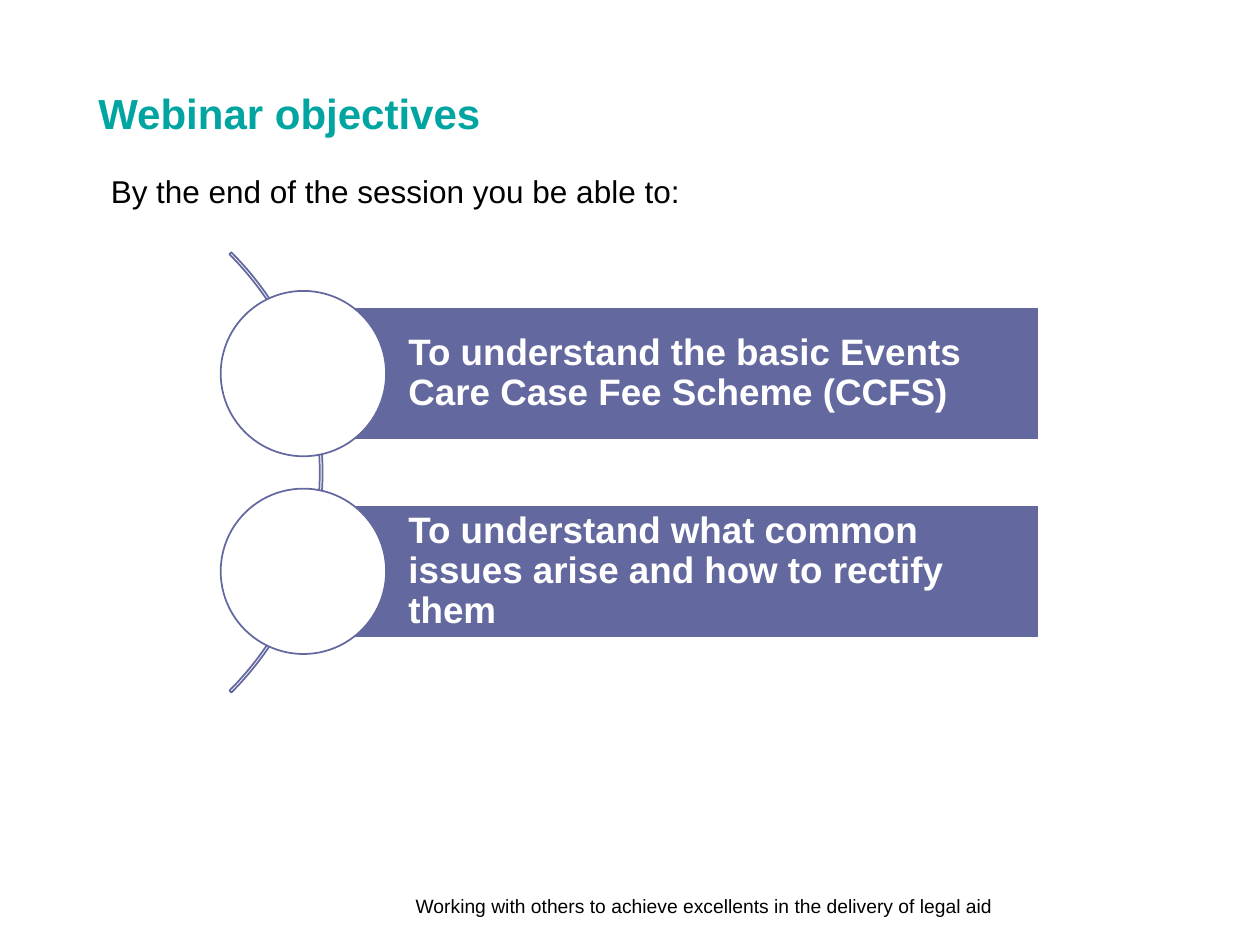
from pptx import Presentation
from pptx.dml.color import RGBColor
from pptx.enum.shapes import MSO_SHAPE
from pptx.enum.text import MSO_ANCHOR, PP_ALIGN
from pptx.util import Pt

TITLE = "Webinar objectives"
INTRO = "By the end of the session you be able to:"
OBJECTIVES = [
    "To understand the basic Events Care Case Fee Scheme (CCFS)",
    "To understand what common issues arise and how to rectify them",
]
FOOTER = "Working with others to achieve excellents in the delivery of legal aid"

TEAL = RGBColor(0x00, 0xA5, 0xA1)
PURPLE = RGBColor(0x63, 0x68, 0x9F)
WHITE = RGBColor(0xFF, 0xFF, 0xFF)
BLACK = RGBColor(0x00, 0x00, 0x00)
FONT = "Arial"

RECTANGLE, OVAL, ARC = MSO_SHAPE.RECTANGLE, MSO_SHAPE.OVAL, MSO_SHAPE.BLOCK_ARC
TOP, MIDDLE, BOTTOM = MSO_ANCHOR.TOP, MSO_ANCHOR.MIDDLE, MSO_ANCHOR.BOTTOM
LEFT, RIGHT = PP_ALIGN.LEFT, PP_ALIGN.RIGHT

ARC_CENTER, ARC_SIZE = (6.5, 270), 355.7
BAR_LEFT, BAR_WIDTH, BAR_HEIGHT = 173.4, 420.5, 75.6
CIRCLE_SIZE = 94.5
ROW_PITCH = 113


def write(box, text, size, color, bold=False, anchor=TOP, align=LEFT,
          insets=(0, 0, 0, 0), line_spacing=1.0):
    frame = box.text_frame
    frame.word_wrap = True
    frame.vertical_anchor = anchor
    (frame.margin_left, frame.margin_top,
     frame.margin_right, frame.margin_bottom) = map(Pt, insets)
    frame.text = text
    para = frame.paragraphs[0]
    para.alignment = align
    para.line_spacing = line_spacing
    font = para.runs[0].font
    font.name, font.size, font.bold = FONT, Pt(size), bold
    font.color.rgb = color


def add_shape(slide, kind, center, width, height, fill, line):
    x, y = center
    shape = slide.shapes.add_shape(
        kind, Pt(x - width / 2), Pt(y - height / 2), Pt(width), Pt(height))
    shape.shadow.inherit = False
    if fill is None:
        shape.fill.background()
    else:
        shape.fill.solid()
        shape.fill.fore_color.rgb = fill
    shape.line.color.rgb = line
    shape.line.width = Pt(1)
    return shape


def add_text(slide, left, top, width, height, *content, **style):
    box = slide.shapes.add_textbox(Pt(left), Pt(top), Pt(width), Pt(height))
    write(box, *content, **style)


def add_objectives(slide):
    arc = add_shape(slide, ARC, ARC_CENTER, ARC_SIZE, ARC_SIZE, None, PURPLE)
    for index, value in enumerate((189, 27, 0.0044)):
        arc.adjustments[index] = value

    first_row = ARC_CENTER[1] - ROW_PITCH * (len(OBJECTIVES) - 1) / 2
    for index, objective in enumerate(OBJECTIVES):
        y = first_row + index * ROW_PITCH
        bar = add_shape(slide, RECTANGLE, (BAR_LEFT + BAR_WIDTH / 2, y),
                        BAR_WIDTH, BAR_HEIGHT, PURPLE, WHITE)
        write(bar, objective, 21, WHITE, bold=True, anchor=MIDDLE,
              insets=(60, 4.2, 4.2, 4.2), line_spacing=0.9)
        add_shape(slide, OVAL, (BAR_LEFT, y), CIRCLE_SIZE, CIRCLE_SIZE,
                  WHITE, PURPLE)


def main():
    deck = Presentation()
    deck.slide_width, deck.slide_height = Pt(720), Pt(540)
    slide = deck.slides.add_slide(deck.slide_layouts[5])

    title = slide.shapes.title
    title.left, title.top, title.width, title.height = map(
        Pt, (56.2, 53.3, 607.7, 27.4))
    write(title, TITLE, 24, TEAL, bold=True, line_spacing=0.9)

    add_text(slide, 31, 498.2, 536.4, 25.9, FOOTER, 11, BLACK,
             anchor=BOTTOM, align=RIGHT)
    add_objectives(slide)
    add_text(slide, 56.2, 95, 395.3, 28.8, INTRO, 18, BLACK,
             insets=(7.2, 3.6, 7.2, 3.6))
    deck.save("out.pptx")


if __name__ == "__main__":
    main()
